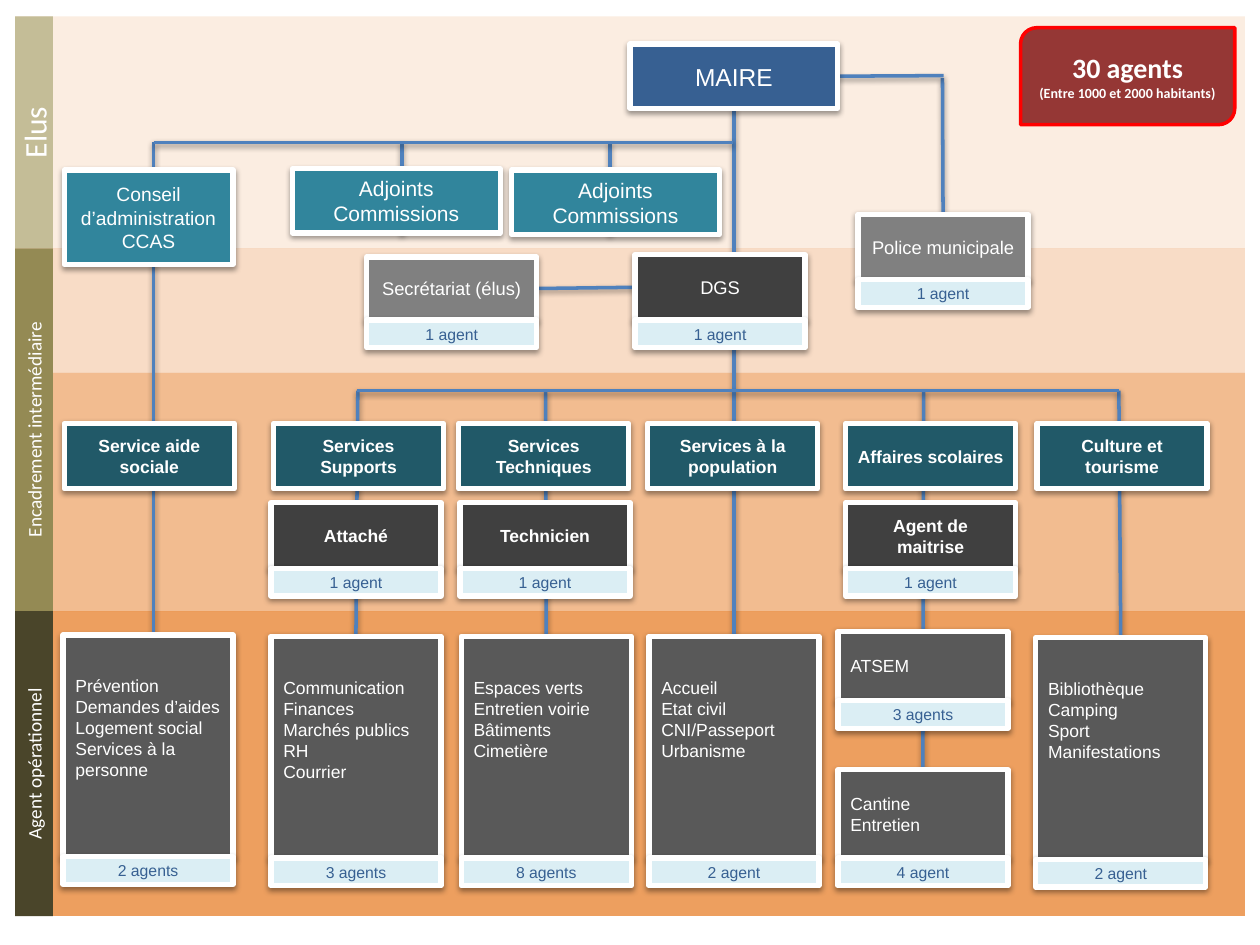
from dataclasses import dataclass

from pptx import Presentation
from pptx.dml.color import RGBColor
from pptx.enum.shapes import MSO_CONNECTOR as Connector, MSO_SHAPE as Preset
from pptx.enum.text import MSO_ANCHOR as Anchor, PP_ALIGN as Align
from pptx.oxml import parse_xml
from pptx.oxml.ns import nsdecls, qn
from pptx.util import Pt

PX = 9144
TOP, BOTTOM, LEFT, RIGHT = 0, 2, 1, 3


@dataclass(frozen=True)
class Theme:
    """Colours, fonts and type sizes of the chart."""
    band: str = "E46C0A"
    link: str = "4F81BD"
    white: str = "FFFFFF"
    mayor: str = "376092"
    council: str = "31859C"
    service: str = "215968"
    manager: str = "404040"
    support: str = "808080"
    team: str = "595959"
    tag: str = "DBEEF4"
    badge: str = "953735"
    badge_line: str = "FF0000"
    font: str = "Arial"
    label_font: str = "Calibri"
    mayor_size: float = 14
    deputy_size: float = 12
    council_size: float = 11
    staff_size: float = 10.5
    body_size: float = 10
    tag_size: float = 9


THEME = Theme()


@dataclass(frozen=True)
class Box:
    """A rectangle in px."""
    left: int
    top: int
    width: int
    height: int

    def inner(self, left, top, width, height):
        """Return a box placed relative to this one."""
        return Box(self.left + left, self.top + top, width, height)

    def emu(self):
        """Return the four lengths in EMU."""
        return [value * PX for value in (self.left, self.top, self.width, self.height)]


def write_text(shape, text, *, size=THEME.body_size, color=THEME.white, bold=False,
               font=THEME.font, align=Align.CENTER, anchor=Anchor.MIDDLE, inset=5):
    """Write one paragraph per line; size may be a list with one value per line."""
    frame = shape.text_frame
    frame.word_wrap = True
    frame.vertical_anchor = anchor
    frame.margin_top = inset * PX
    lines = text.split("\n")
    sizes = size if isinstance(size, list) else [size] * len(lines)
    for index, (line, points) in enumerate(zip(lines, sizes)):
        paragraph = frame.add_paragraph() if index else frame.paragraphs[0]
        paragraph.alignment = align
        run = paragraph.add_run()
        run.text = line
        run.font.size = Pt(points)
        run.font.name = font
        run.font.bold = bold
        run.font.color.rgb = RGBColor.from_string(color)


def add_shadow(shape):
    """Give a shape or connector a soft shadow below it."""
    shape.element.spPr.append(parse_xml(
        f'<a:effectLst {nsdecls("a")}><a:outerShdw blurRad="40000" dist="20000" dir="5400000" '
        'rotWithShape="0"><a:srgbClr val="000000"><a:alpha val="38000"/></a:srgbClr>'
        '</a:outerShdw></a:effectLst>'))


def add_block(shapes, box, fill, *, preset=Preset.RECTANGLE, line=None, width=3, alpha=None):
    """Add a filled shape, optionally outlined or transparent."""
    shape = shapes.add_shape(preset, *box.emu())
    shape.fill.solid()
    shape.fill.fore_color.rgb = RGBColor.from_string(fill)
    if line:
        shape.line.color.rgb = RGBColor.from_string(line)
        shape.line.width = Pt(width)
    else:
        shape.line.fill.background()
    if alpha:
        color = shape.element.spPr.find(qn("a:solidFill"))[0]
        color.append(parse_xml(f'<a:alpha {nsdecls("a")} val="{alpha * 1000}"/>'))
    return shape


def add_card(shapes, box, fill, text, *, agents=None, **text_format):
    """Add a white-edged card, with its head count below when given."""
    card = add_block(shapes, box, fill, line=THEME.white)
    add_shadow(card)
    write_text(card, text, **text_format)
    if agents:
        add_card(shapes, box.inner(0, box.height, box.width, 22), THEME.tag, agents,
                 size=THEME.tag_size, color=THEME.mayor)
    return card


def add_link(shapes, begin, end, back):
    """Join two ends, each a point or a (shape, site) pair, just above the back shape."""
    points = [end_ if isinstance(end_[0], int) else (0, 0) for end_ in (begin, end)]
    connector = shapes.add_connector(
        Connector.STRAIGHT, *[value * PX for point in points for value in point])
    if not isinstance(begin[0], int):
        connector.begin_connect(*begin)
    if not isinstance(end[0], int):
        connector.end_connect(*end)
    connector.line.color.rgb = RGBColor.from_string(THEME.link)
    connector.line.width = Pt(2)
    add_shadow(connector)
    back.element.addnext(connector.element)


def draw_bands(shapes, boxes):
    """Draw the level bands and return the last one."""
    for box, alpha in zip(boxes, (12, 23, 45, 65)):
        band = add_block(shapes, box, THEME.band, alpha=alpha)
        band.shadow.inherit = False
    return band


def draw_level_label(shapes, box, fill, text, size):
    """Draw a vertical level label filling the box."""
    turned = box.inner((box.width - box.height) // 2, (box.height - box.width) // 2,
                       box.height, box.width)
    label = add_block(shapes, turned, fill)
    label.shadow.inherit = False
    label.rotation = 270
    write_text(label, text, size=size, font=THEME.label_font)


def draw_elected(shapes, box):
    """Draw the elected level and return the mayor and police cards."""
    badge = add_block(shapes, box.inner(798, 9, 170, 77), THEME.badge, line=THEME.badge_line,
                      width=2, preset=Preset.ROUND_2_DIAG_RECTANGLE)
    badge.shadow.inherit = False
    write_text(badge, "30 agents\n(Entre 1000 et 2000 habitants)", size=[16, 8], bold=True,
               font=THEME.label_font)
    for left, top in ((220, 121), (394, 122)):
        add_card(shapes, box.inner(left, top, 165, 51), THEME.council, "Adjoints\nCommissions",
                 size=THEME.deputy_size)
    add_card(shapes, box.inner(39, 122, 134, 75), THEME.council,
             "Conseil d’administration\nCCAS", size=THEME.council_size)
    mayor = add_card(shapes, box.inner(488, 22, 165, 51), THEME.mayor, "MAIRE",
                     size=THEME.mayor_size)
    police = add_card(shapes, box.inner(669, 157, 135, 52), THEME.support, "Police municipale",
                      agents="1 agent", size=THEME.staff_size)
    return mayor, police


def draw_direction(shapes, box):
    """Draw the direction level and return the secretariat and director cards."""
    cards = ((279, 7, 50, THEME.support, "Secrétariat (élus)"), (492, 5, 52, THEME.manager, "DGS"))
    return [add_card(shapes, box.inner(left, top, 135, height), fill, text, agents="1 agent",
                     size=THEME.staff_size) for left, top, height, fill, text in cards]


def draw_services(shapes, box):
    """Draw the service names and their managers."""
    names = ((39, "Service aide sociale"), (205, "Services Supports"),
             (352, "Services Techniques"), (502, "Services à la population"),
             (659, "Affaires scolaires"), (811, "Culture et tourisme"))
    for left, text in names:
        add_card(shapes, box.inner(left, 40, 135, 52), THEME.service, text, bold=True)
    for left, text in ((203, "Attaché"), (353, "Technicien"), (659, "Agent de maitrise")):
        add_card(shapes, box.inner(left, 103, 135, 52), THEME.manager, text, agents="1 agent",
                 bold=True)


def draw_teams(shapes, box):
    """Draw the operational teams and return their cards by first word."""
    tall = (
        (38, 19, "Prévention\nDemandes d’aides\nLogement social\nServices à la personne", "2 agents"),
        (203, 20, "Communication\nFinances\nMarchés publics\nRH\nCourrier", "3 agents"),
        (354, 20, "Espaces verts\nEntretien voirie\nBâtiments\nCimetière", "8 agents"),
        (503, 20, "Accueil\nEtat civil\nCNI/Passeport\nUrbanisme", "2 agent"),
        (810, 21, "Bibliothèque\nCamping\nSport\nManifestations", "2 agent"))
    short = ((16, 55, "ATSEM", "3 agents"), (126, 70, "Cantine\nEntretien", "4 agent"))
    teams = {}
    for left, top, text, agents in tall:
        teams[text.split()[0]] = add_card(
            shapes, box.inner(left, top, 135, 176), THEME.team, text, agents=agents,
            align=Align.LEFT, anchor=Anchor.TOP, inset=32)
    for top, height, text, agents in short:
        teams[text.split()[0]] = add_card(
            shapes, box.inner(653, top, 135, height), THEME.team, text, agents=agents,
            align=Align.LEFT)
    return teams


def main():
    """Build and save the staff chart."""
    presentation = Presentation()
    presentation.slide_width, presentation.slide_height = 1000 * PX, 750 * PX
    shapes = presentation.slides.add_slide(presentation.slide_layouts[6]).shapes
    levels = [Box(12, top, 976, height)
              for top, height in ((13, 184), (197, 99), (296, 189), (485, 242))]
    elected, direction, services, operations = levels
    back = draw_bands(shapes, levels)
    mayor, police = draw_elected(shapes, elected)
    secretariat, director = draw_direction(shapes, direction)
    draw_services(shapes, services)
    teams = draw_teams(shapes, operations)
    for box, fill, text, size in (
            (elected.inner(0, 0, 30, 184), "C4BD97", "Elus", 18),
            (direction.inner(0, 0, 30, 288), "948A54", "Encadrement intermédiaire", 11),
            (operations.inner(0, 0, 30, 242), "4A452A", "Agent opérationnel", 11)):
        draw_level_label(shapes, box, fill, text, size)
    links = [((122, 113), (582, 113)), ((283, 310), (888, 310)), ((122, 113), (122, 595)),
             ((mayor, BOTTOM), (teams["Accueil"], TOP)), ((mayor, RIGHT), (749, 60)),
             ((748, 62), (police, TOP)), ((secretariat, RIGHT), (director, LEFT))]
    links += [((x, 113), (x, 186)) for x in (319, 484)]
    links += [((x, 310), (teams[name], TOP)) for x, name in (
        (284, "Communication"), (433, "Espaces"), (733, "Cantine"), (888, "Bibliothèque"))]
    for begin, end in links:
        add_link(shapes, begin, end, back)
    presentation.save("out.pptx")


if __name__ == "__main__":
    main()
